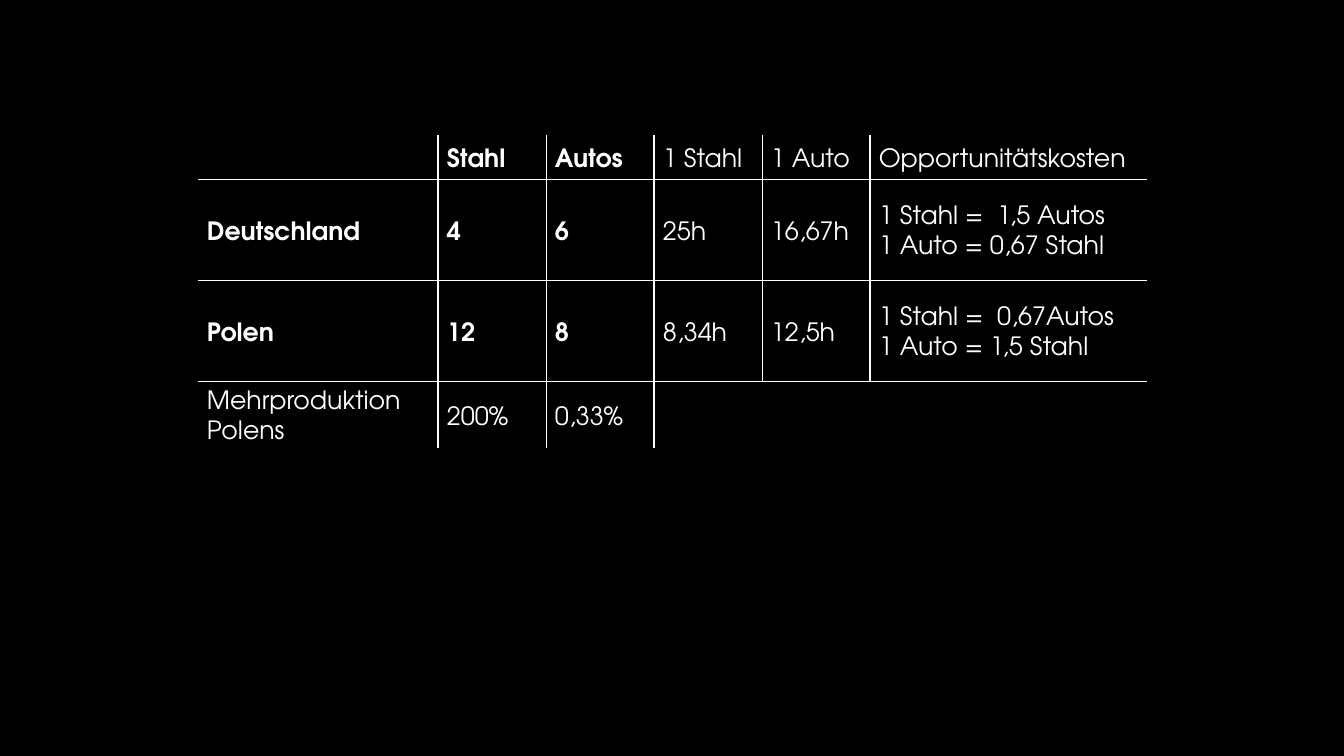
from dataclasses import dataclass
from itertools import accumulate

from lxml.etree import SubElement
from pptx import Presentation
from pptx.dml.color import RGBColor
from pptx.enum.shapes import MSO_CONNECTOR
from pptx.enum.text import MSO_ANCHOR
from pptx.oxml.ns import qn
from pptx.util import Emu, Pt

ROWS = [
    ["", "Stahl", "Autos", "1 Stahl", "1 Auto", "Opportunitätskosten"],
    ["Deutschland", "4", "6", "25h", "16,67h",
     "1 Stahl =  1,5 Autos\n1 Auto = 0,67 Stahl"],
    ["Polen", "12", "8", "8,34h", "12,5h",
     "1 Stahl =  0,67Autos\n1 Auto = 1,5 Stahl"],
    ["Mehrproduktion\nPolens", "200%", "0,33%", "", "", ""],
]
BOLD_ROWS, BOLD_COLS = 3, 3

LEFT, TOP = 198, 135
COL_WIDTHS = [240, 108, 108, 108, 108, 277]
ROW_HEIGHTS = [44, 101, 101, 67]
INSET, TOP_INSET, LINE_PITCH = 9, 8, 30

# (weight in points, rows spanned) for each inner column edge
VERTICAL_RULES = [(1.5, 4), (0.5, 4), (1.5, 4), (0.5, 3), (1.5, 3)]
HORIZONTAL_WEIGHT = 0.5
NO_STYLE = "{2D5ABB26-0587-4C30-8999-92F81FD0307C}"


@dataclass(frozen=True)
class Theme:
    background: str = "000000"
    ink: str = "FFFFFF"
    font: str = "TeX Gyre Adventor"
    size: int = 18


THEME = Theme()


def px(n):
    return Emu(round(n * 914400 / 100.8))


def set_text(cell, text, bold):
    tf = cell.text_frame
    tf.text = text
    stacked = len(tf.paragraphs) > 1
    cell.vertical_anchor = MSO_ANCHOR.MIDDLE
    cell.margin_left, cell.margin_right = px(INSET), 0
    cell.margin_top = 0 if stacked else px(TOP_INSET)
    cell.margin_bottom = 0
    for p in tf.paragraphs:
        if stacked:
            p.line_spacing = px(LINE_PITCH)
        p.font.name = THEME.font
        p.font.size = Pt(THEME.size)
        p.font.bold = bold
        p.font.color.rgb = RGBColor.from_string(THEME.ink)


def add_cost_table(s):
    frame = s.shapes.add_table(
        len(ROWS), len(COL_WIDTHS), px(LEFT), px(TOP),
        px(sum(COL_WIDTHS)), px(sum(ROW_HEIGHTS)))
    table = frame.table
    table.first_row = table.horz_banding = False
    table._tbl.tblPr.find(qn("a:tableStyleId")).text = NO_STYLE
    for column, width in zip(table.columns, COL_WIDTHS):
        column.width = px(width)
    for row, height in zip(table.rows, ROW_HEIGHTS):
        row.height = px(height)
    for r, texts in enumerate(ROWS):
        for c, text in enumerate(texts):
            cell = table.cell(r, c)
            set_text(cell, text, r < BOLD_ROWS and c < BOLD_COLS)
            cell.fill.background()


def add_rule(s, x1, y1, x2, y2, weight):
    rule = s.shapes.add_connector(
        MSO_CONNECTOR.STRAIGHT, px(x1), px(y1), px(x2), px(y2))
    rule.line.width = Pt(weight)
    rule.line.color.rgb = RGBColor.from_string(THEME.ink)
    SubElement(rule._element.spPr, qn("a:effectLst"))


def add_rules(s):
    xs = list(accumulate(COL_WIDTHS, initial=LEFT))
    ys = list(accumulate(ROW_HEIGHTS, initial=TOP))
    for x, (weight, rows) in zip(xs[1:], VERTICAL_RULES):
        add_rule(s, x, TOP, x, ys[rows], weight)
    for y in ys[1:-1]:
        add_rule(s, LEFT, y, xs[-1], y, HORIZONTAL_WEIGHT)


def main():
    prs = Presentation()
    prs.slide_width, prs.slide_height = px(1344), px(756)
    s = prs.slides.add_slide(prs.slide_layouts[6])
    s.background.fill.solid()
    s.background.fill.fore_color.rgb = RGBColor.from_string(THEME.background)
    add_cost_table(s)
    add_rules(s)
    prs.save("out.pptx")


if __name__ == "__main__":
    main()
